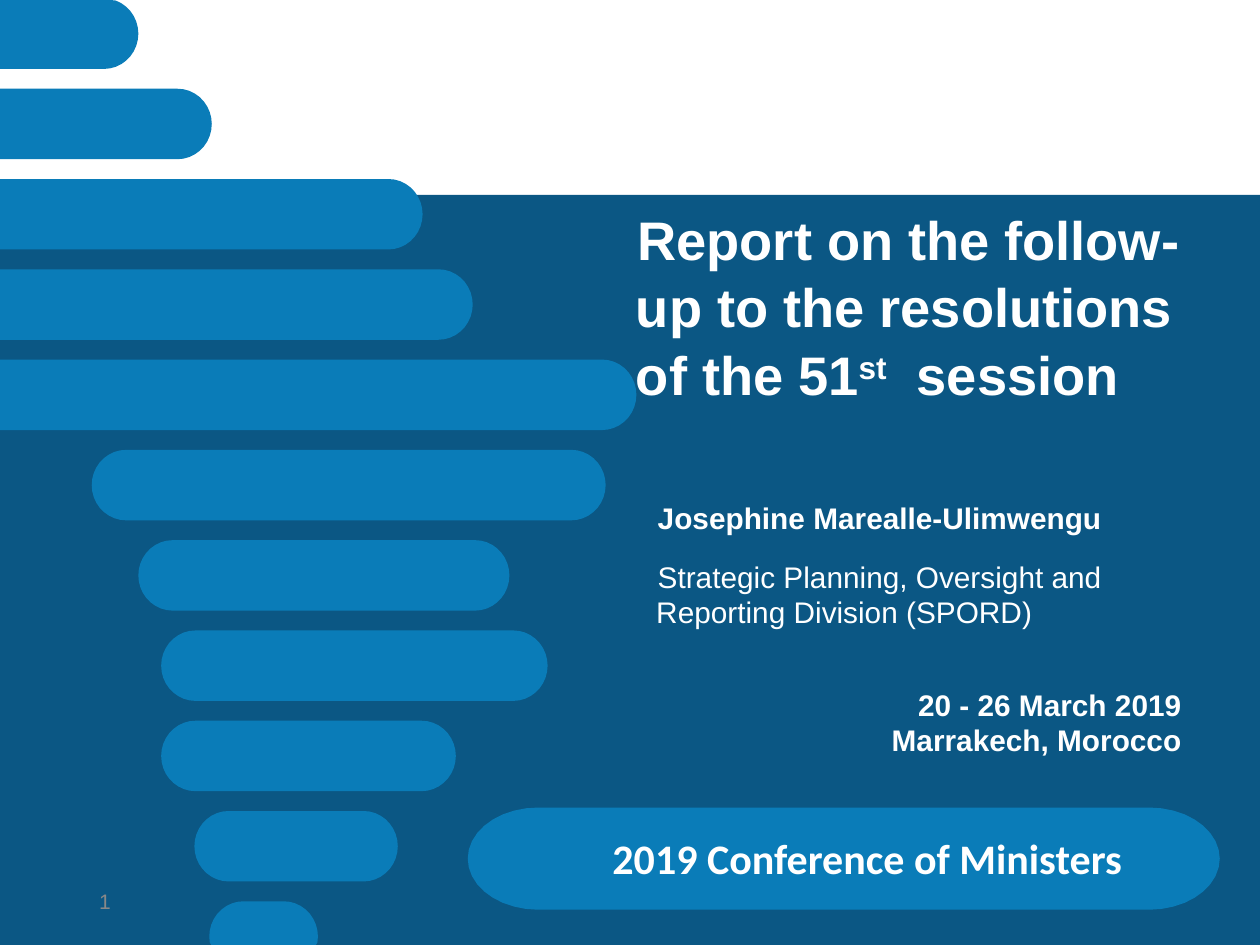
from math import cos, radians, sin

from pptx import Presentation
from pptx.dml.color import RGBColor
from pptx.enum.shapes import MSO_SHAPE
from pptx.enum.text import MSO_ANCHOR, PP_ALIGN
from pptx.util import Cm, Pt

NAVY = RGBColor(0x0B, 0x57, 0x84)
BLUE = RGBColor(0x0A, 0x7C, 0xB8)
WHITE = RGBColor(0xFF, 0xFF, 0xFF)
GREY = RGBColor(0x88, 0x88, 0x88)

SLIDE_WIDTH, SLIDE_HEIGHT = 25.4, 19.05

presentation = Presentation()
presentation.slide_width = Cm(SLIDE_WIDTH)
presentation.slide_height = Cm(SLIDE_HEIGHT)
slide = presentation.slides.add_slide(presentation.slide_layouts[6])


def add_pill(left, top, right, height, end_radius):
    """Draw a bar with elliptical ends, cut off at the slide edges."""
    points = []
    for center, start in ((right - end_radius, -90), (left + end_radius, 90)):
        for angle in range(start, start + 181, 10):
            x = center + end_radius * cos(radians(angle))
            y = top + height / 2 * (1 + sin(radians(angle)))
            points.append((Cm(min(max(x, 0), SLIDE_WIDTH)),
                           Cm(min(max(y, 0), SLIDE_HEIGHT))))
    builder = slide.shapes.build_freeform(*points[0], scale=1.0)
    builder.add_line_segments(points[1:], close=True)
    pill = builder.convert_to_shape()
    pill.shadow.inherit = False
    pill.fill.solid()
    pill.fill.fore_color.rgb = BLUE
    pill.line.fill.background()


def add_text(box, lines, size, color=WHITE, font="Arial", bold=True, inset=None,
             indent=0.03, margin=0, align=PP_ALIGN.LEFT, anchor=MSO_ANCHOR.TOP):
    """Add a text box at box (left, top, width, height) and return its paragraphs."""
    frame = slide.shapes.add_textbox(*map(Cm, box)).text_frame
    frame.word_wrap = True
    frame.vertical_anchor = anchor
    if inset is not None:
        frame.margin_left = frame.margin_right = Cm(inset)
        frame.margin_top = frame.margin_bottom = Cm(inset)
    frame.text = "\n".join(lines)
    for paragraph in frame.paragraphs:
        paragraph.alignment = align
        properties = paragraph._p.get_or_add_pPr()
        properties.set("marL", str(Cm(margin)))
        properties.set("indent", str(Cm(indent)))
        paragraph.font.name = font
        paragraph.font.size = Pt(size)
        paragraph.font.bold = bold
        paragraph.font.color.rgb = color
    return frame.paragraphs


# Background panel and conference banner
panel = slide.shapes.add_shape(MSO_SHAPE.RECTANGLE, 0, Cm(3.93), Cm(25.4), Cm(15.45))
panel.shadow.inherit = False
panel.fill.solid()
panel.fill.fore_color.rgb = NAVY
panel.line.fill.background()
add_pill(9.43, 16.28, 24.59, 2.06, 1.42)

# Stack of bars, given as left and right ends; the first five run off the left edge
BAR_ENDS = [(-2, 2.79), (-2, 4.27), (-2, 8.52), (-2, 9.53), (-2, 12.83),
            (1.85, 12.21), (2.79, 10.27), (3.25, 11.04), (3.25, 9.19),
            (3.92, 8.02), (4.22, 6.41)]
BAR_TOP, BAR_PITCH, BAR_HEIGHT = -0.03, 1.82, 1.42
for row, (left, right) in enumerate(BAR_ENDS):
    add_pill(left, BAR_TOP + row * BAR_PITCH, right, BAR_HEIGHT, 0.69)

# Title with a raised ordinal
title = add_text((12.57, 3.63, 12.22, 5.03),
                 ["Report on the follow-up to the resolutions of the 51"], 31,
                 anchor=MSO_ANCHOR.MIDDLE)[0]
title.line_spacing = 1.04
ordinal = title.add_run()
ordinal.text = "st"
ordinal.font._element.set("baseline", "30000")
title.add_run().text = "  session"

# Date and place
add_text((15.82, 13.84, 8, 1.45), ["20 - 26 March 2019", "Marrakech, Morocco"], 17,
         inset=0, margin=0.51, indent=1.02, align=PP_ALIGN.RIGHT)

# Banner label and slide number
add_text((9.98, 16.66, 13.94, 1.27), ["2019 Conference of Ministers"], 24,
         font="Calibri", inset=0.13, indent=1.07, align=PP_ALIGN.CENTER)
add_text((1.75, 17.65, 5.72, 1.02), ["1"], 12, color=GREY, bold=False, indent=0,
         anchor=MSO_ANCHOR.MIDDLE)

# Speaker and division
speaker, division = add_text(
    (13.23, 10.08, 11.35, 2.64),
    ["Josephine Marealle-Ulimwengu",
     "Strategic Planning, Oversight and Reporting Division (SPORD)"], 17, inset=0)
division.space_before = Pt(13)
division.font.bold = False

presentation.save("out.pptx")
